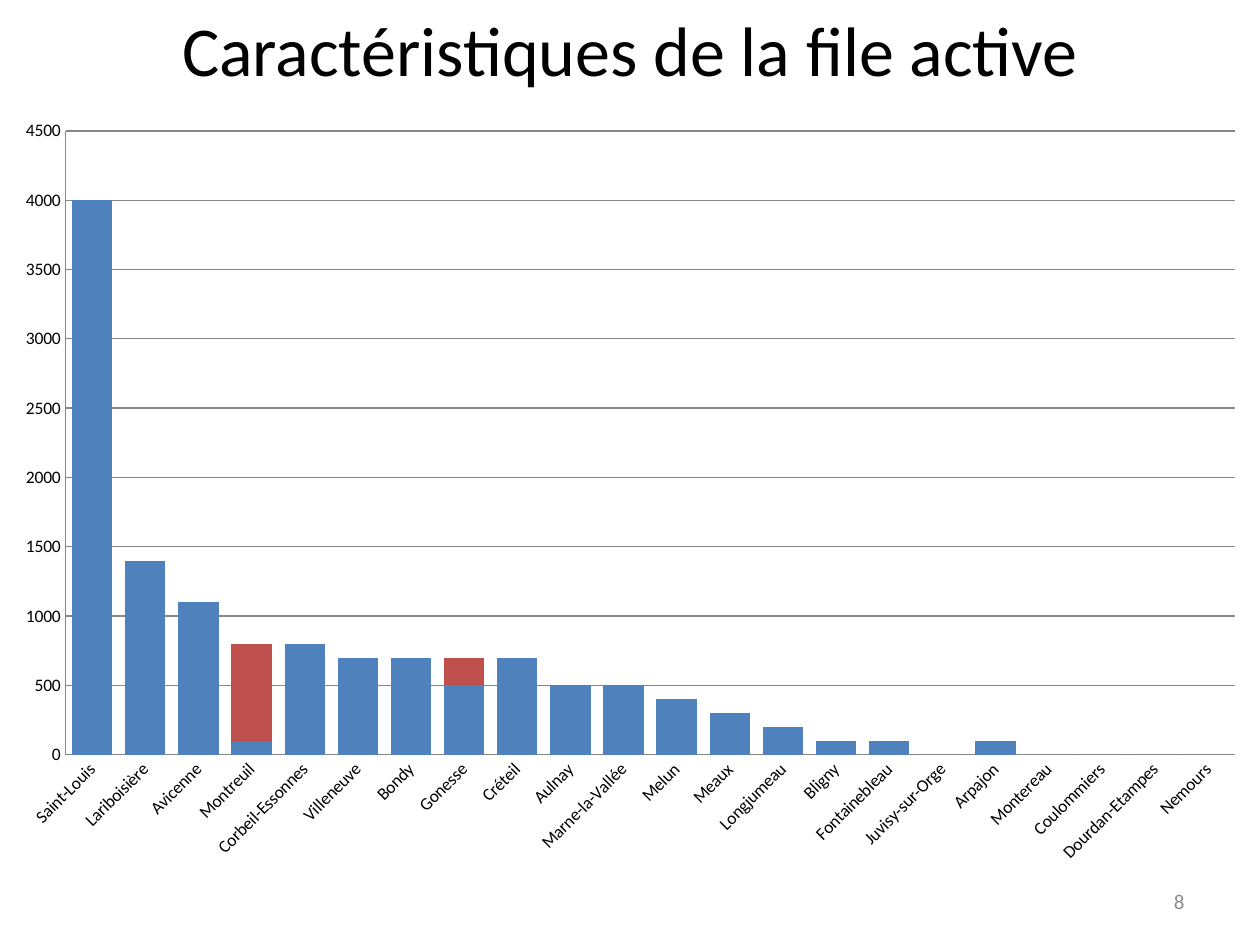
from lxml import etree
from pptx import Presentation
from pptx.chart.data import CategoryChartData
from pptx.dml.color import RGBColor
from pptx.enum.chart import XL_CHART_TYPE as ChartType, XL_TICK_MARK as TickMark
from pptx.enum.text import MSO_ANCHOR as Anchor, PP_ALIGN as Align
from pptx.oxml.ns import qn
from pptx.util import Inches, Pt

THEME = {
    "font": "Calibri",
    "ink": RGBColor.from_string("000000"),
    "muted": RGBColor.from_string("8C8C8C"),
    "grid": RGBColor.from_string("868686"),
    "series": [RGBColor.from_string("4F81BD"), RGBColor.from_string("C0504D")],
    "title_size": Pt(40),
    "number_size": Pt(12),
    "chart_size": Pt(10),
}

TEXTS = [
    ("8", (7.17, 6.95, 2.33, 0.4), Anchor.MIDDLE, Align.RIGHT, "number_size", "muted"),
    ("Caractéristiques de la file active", (0, 0, 10, 0.77), Anchor.TOP, Align.CENTER,
     "title_size", "ink"),
]

SERIES_NAMES = ("Series 1", "Series 2")
PATIENTS = [
    ("Saint-Louis", 4000, 0),
    ("Lariboisière", 1400, 0),
    ("Avicenne", 1100, 0),
    ("Montreuil", 100, 700),
    ("Corbeil-Essonnes", 800, 0),
    ("Villeneuve", 700, 0),
    ("Bondy", 700, 0),
    ("Gonesse", 500, 200),
    ("Créteil", 700, 0),
    ("Aulnay", 500, 0),
    ("Marne-la-Vallée", 500, 0),
    ("Melun", 400, 0),
    ("Meaux", 300, 0),
    ("Longjumeau", 200, 0),
    ("Bligny", 100, 0),
    ("Fontainebleau", 100, 0),
    ("Juvisy-sur-Orge", 0, 0),
    ("Arpajon", 100, 0),
    ("Montereau", 0, 0),
    ("Coulommiers", 0, 0),
    ("Dourdan-Etampes", 0, 0),
    ("Nemours", 0, 0),
]
CHART_BOX = (0, 0.84, 10, 6.14)
PLOT_BOX = (0.52, 1.04, 9.28, 4.95)


def apply(target, **values):
    """Set each named attribute on the target."""
    for name, value in values.items():
        setattr(target, name, value)


def style_font(font, size, color):
    """Give a font the theme's face, size and colour."""
    apply(font, name=THEME["font"], size=THEME[size])
    font.color.rgb = THEME[color]


def add_text(slide, text, box, anchor, align, size, color):
    """Add one single-line text box."""
    frame = slide.shapes.add_textbox(*map(Inches, box)).text_frame
    apply(frame, word_wrap=True, vertical_anchor=anchor)
    paragraph = frame.paragraphs[0]
    apply(paragraph, text=text, alignment=align)
    style_font(paragraph.runs[0].font, size, color)


def place_plot(chart):
    """Fix the inner plot area as fractions of the chart."""
    chart_left, chart_top, chart_width, chart_height = CHART_BOX
    left, top, width, height = PLOT_BOX
    settings = {
        "layoutTarget": "inner", "xMode": "edge", "yMode": "edge",
        "x": (left - chart_left) / chart_width,
        "y": (top - chart_top) / chart_height,
        "w": width / chart_width,
        "h": height / chart_height,
    }
    plot_area = chart.plots[0]._element.getparent()
    for old_layout in plot_area.findall(qn("c:layout")):
        plot_area.remove(old_layout)
    layout = etree.Element(qn("c:layout"))
    manual = etree.SubElement(layout, qn("c:manualLayout"))
    for name, value in settings.items():
        etree.SubElement(manual, qn(f"c:{name}")).set("val", str(value))
    plot_area.insert(0, layout)


def add_patient_chart(slide):
    """Add the stacked columns of patients by hospital."""
    names, *columns = zip(*PATIENTS)
    data = CategoryChartData()
    data.categories = names
    for series_name, values in zip(SERIES_NAMES, columns):
        data.add_series(series_name, values)
    chart = slide.shapes.add_chart(
        ChartType.COLUMN_STACKED, *map(Inches, CHART_BOX), data).chart
    apply(chart, has_legend=False, has_title=False)
    style_font(chart.font, "chart_size", "ink")
    plot = chart.plots[0]
    apply(plot, gap_width=32, overlap=100, vary_by_categories=False)
    for series, color in zip(plot.series, THEME["series"]):
        series.format.fill.solid()
        series.format.fill.fore_color.rgb = color
    hospitals, counts = chart.category_axis, chart.value_axis
    for axis in (hospitals, counts):
        apply(axis, major_tick_mark=TickMark.NONE, minor_tick_mark=TickMark.NONE)
        style_font(axis.tick_labels.font, "chart_size", "ink")
    apply(counts, minimum_scale=0, maximum_scale=4500, major_unit=500,
          has_major_gridlines=True)
    for item in (hospitals, counts, counts.major_gridlines):
        item.format.line.color.rgb = THEME["grid"]
        item.format.line.width = Pt(0.75)
    label_body = hospitals._element.find(qn("c:txPr")).find(qn("a:bodyPr"))
    label_body.set("rot", str(-45 * 60000))
    label_body.set("vert", "horz")
    place_plot(chart)


def main():
    """Build and save the slide."""
    presentation = Presentation()
    apply(presentation, slide_width=Inches(10), slide_height=Inches(7.5))
    slide = presentation.slides.add_slide(presentation.slide_layouts[6])
    for entry in TEXTS:
        add_text(slide, *entry)
    add_patient_chart(slide)
    presentation.save("out.pptx")


if __name__ == "__main__":
    main()
